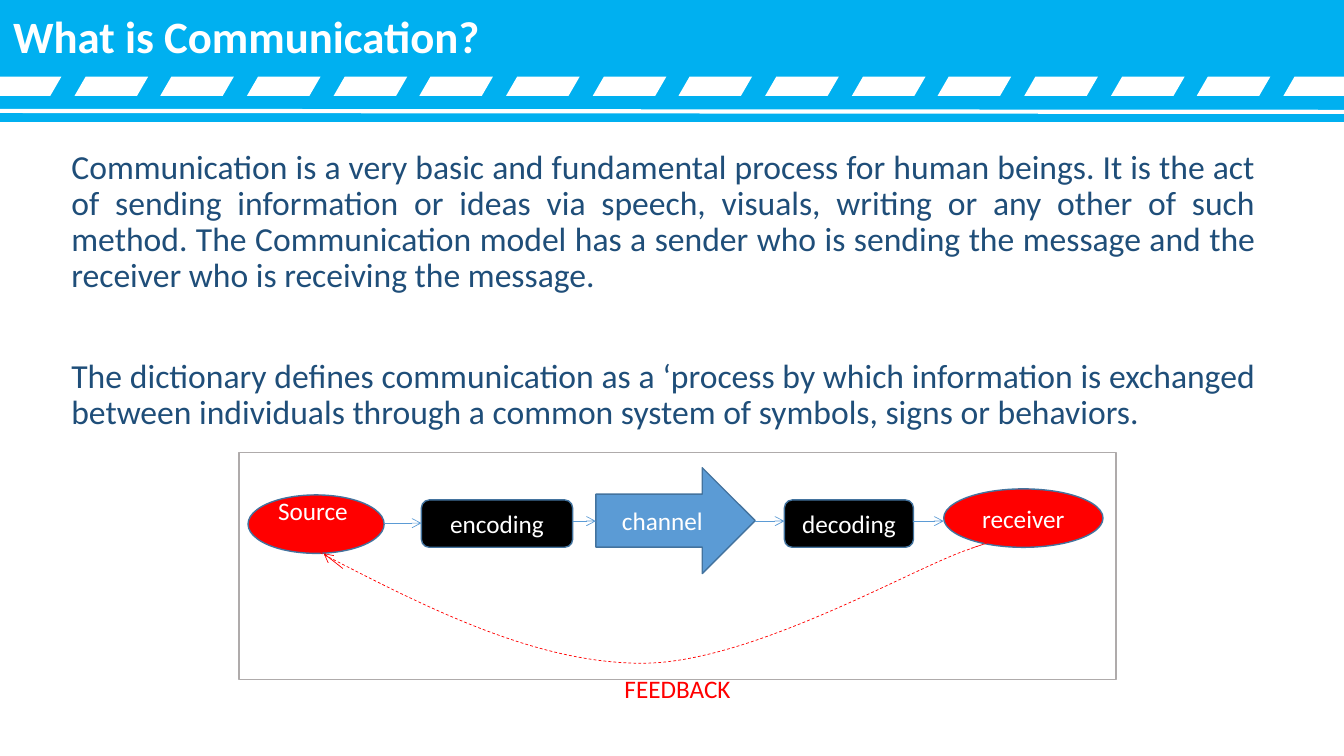
"""Build the slide that explains what communication is."""
from dataclasses import dataclass

from lxml import etree
from pptx import Presentation
from pptx.dml.color import RGBColor
from pptx.enum.dml import MSO_LINE
from pptx.enum.shapes import MSO_CONNECTOR, MSO_SHAPE
from pptx.enum.text import MSO_ANCHOR, MSO_AUTO_SIZE, PP_ALIGN
from pptx.oxml.ns import qn
from pptx.util import Emu, Pt

PX = 9144
WIDTH, HEIGHT = 1333, 750
FONT = "Calibri"
WHITE, BLACK, RED = "FFFFFF", "000000", "FF0000"
SKY, NAVY, BLUE, OUTLINE, GREY = "00B0F0", "1F4E79", "5B9BD5", "43739E", "AFABAB"
RECTANGLE, OVAL = MSO_SHAPE.RECTANGLE, MSO_SHAPE.OVAL
ROUNDED, RIGHT_ARROW = MSO_SHAPE.ROUNDED_RECTANGLE, MSO_SHAPE.RIGHT_ARROW
STRAIGHT, DASH = MSO_CONNECTOR.STRAIGHT, MSO_LINE.DASH
LEFT, CENTER, JUSTIFY = PP_ALIGN.LEFT, PP_ALIGN.CENTER, PP_ALIGN.JUSTIFY
TOP, MIDDLE = MSO_ANCHOR.TOP, MSO_ANCHOR.MIDDLE
TITLE_ONLY = 5
DASH_COUNT, DASH_START, DASH_PITCH = 16, -12, 85.67


@dataclass(frozen=True)
class Box:
    left: int
    top: int
    width: int
    height: int


@dataclass(frozen=True)
class Stage:
    label: str
    kind: int
    box: Box
    fill: str
    inset_right: int = 10
    inset_bottom: int = 5


@dataclass(frozen=True)
class Line:
    start: tuple[int, int]
    end: tuple[int, int]
    color: str = BLUE
    weight: float = 0.5
    arrow: bool = True


@dataclass(frozen=True)
class Passage:
    text: str
    space_before: int


STAGES = [
    Stage("Source", OVAL, Box(246, 491, 135, 58), RED, 16, 33),
    Stage("encoding", ROUNDED, Box(418, 496, 150, 47), BLACK),
    Stage("channel", RIGHT_ARROW, Box(591, 464, 158, 105), BLUE),
    Stage("decoding", ROUNDED, Box(778, 496, 128, 47), BLACK),
    Stage("receiver", OVAL, Box(936, 485, 158, 58), RED),
]
LINES = [
    Line((381, 519), (418, 519)),
    Line((568, 517), (591, 517)),
    Line((749, 517), (778, 517)),
    Line((906, 517), (936, 517)),
    Line((340, 564), (321, 549), RED),
]
FEEDBACK_CURVE = [
    (313, 546),
    (421, 602), (530, 658), (637, 658),
    (744, 658), (903, 565), (958, 546),
    (1012, 527), (988, 536), (963, 544),
]
PASSAGES = [
    Passage(
        "Communication is a very basic and fundamental process for human beings. "
        "It is the act of sending information or ideas via speech, visuals, writing "
        "or any other of such method. The Communication model has a sender who is "
        "sending the message and the receiver who is receiving the message.", 10),
    Passage(
        "The dictionary defines communication as a ‘process by which information is "
        "exchanged between individuals through a common system of symbols, signs or "
        "behaviors.", 46),
]


def px(length: float) -> Emu:
    """Turn a length in px into EMU."""
    return Emu(round(length * PX))


def rgb(color: str) -> RGBColor:
    """Turn a hex string into a colour."""
    return RGBColor.from_string(color)


def place(box: Box) -> tuple[Emu, Emu, Emu, Emu]:
    """Give the four lengths of a box in EMU."""
    return px(box.left), px(box.top), px(box.width), px(box.height)


def paint(shape, fill: str = "", line: str = "", weight: float = 1) -> None:
    """Set the fill and outline of a shape and clear its shadow."""
    shape.shadow.inherit = False
    if fill:
        shape.fill.solid()
        shape.fill.fore_color.rgb = rgb(fill)
    else:
        shape.fill.background()
    if line:
        shape.line.color.rgb = rgb(line)
        shape.line.width = Pt(weight)
    else:
        shape.line.fill.background()


def set_frame(frame, anchor=TOP, right: int = 10, bottom: int = 5) -> None:
    """Set wrapping, anchor and insets of a text frame."""
    frame.word_wrap = True
    frame.auto_size = MSO_AUTO_SIZE.NONE
    frame.vertical_anchor = anchor
    frame.margin_left, frame.margin_top = px(10), px(5)
    frame.margin_right, frame.margin_bottom = px(right), px(bottom)


def write(para, text: str, size: int, color: str, align=CENTER, bold=False) -> None:
    """Add one formatted run to a paragraph."""
    para.alignment = align
    span = para.add_run()
    span.text = text
    span.font.name, span.font.size, span.font.bold = FONT, Pt(size), bold
    span.font.color.rgb = rgb(color)


def add_panel(page, kind: int, box: Box, fill: str, line: str = ""):
    """Add a painted preset shape."""
    shape = page.shapes.add_shape(kind, *place(box))
    paint(shape, fill, line)
    return shape


def add_line(page, line: Line) -> None:
    """Add a straight line, with an arrowhead if it has one."""
    connector = page.shapes.add_connector(
        STRAIGHT, *(px(value) for value in line.start + line.end))
    connector.line.color.rgb = rgb(line.color)
    connector.line.width = Pt(line.weight)
    properties = connector._element.spPr
    if line.arrow:
        etree.SubElement(properties.find(qn("a:ln")), qn("a:tailEnd"), type="arrow")
    etree.SubElement(properties, qn("a:effectLst"))


def add_outline(page, points: list[tuple[float, float]], close: bool):
    """Add a freeform through the given points."""
    builder = page.shapes.build_freeform(*points[0], scale=PX)
    builder.add_line_segments(points[1:], close=close)
    return builder.convert_to_shape()


def add_header(page) -> None:
    """Draw the header band, its slanted dashes, its rule and the title."""
    add_panel(page, RECTANGLE, Box(0, 0, WIDTH, 121), SKY)
    for index in range(DASH_COUNT):
        left = round(DASH_START + index * DASH_PITCH)
        corners = [(left + 11, 76), (left + 73, 76), (left + 62, 95), (left, 95)]
        paint(add_outline(page, corners, True), WHITE)
    add_line(page, Line((0, 110), (WIDTH, 111), WHITE, 3, False))
    title = page.shapes.title
    title.left, title.top, title.width, title.height = place(Box(3, 4, 691, 64))
    set_frame(title.text_frame)
    write(title.text_frame.paragraphs[0], "What is Communication?", 32, WHITE, LEFT, True)
    title.element.getparent().append(title.element)


def add_passages(page) -> None:
    """Write the two body paragraphs."""
    frame = page.shapes.add_textbox(*place(Box(61, 144, 1194, 296))).text_frame
    set_frame(frame)
    for index, passage in enumerate(PASSAGES):
        para = frame.add_paragraph() if index else frame.paragraphs[0]
        para.line_spacing, para.space_before = 0.9, Pt(passage.space_before)
        write(para, passage.text, 24, NAVY, JUSTIFY)


def add_feedback(page) -> None:
    """Draw the dashed feedback curve and its label."""
    curve = add_outline(page, FEEDBACK_CURVE, False)
    paint(curve, line=RED, weight=0.5)
    curve.line.dash_style = DASH
    outline = next(curve.element.iter(qn("a:path")))
    segments = outline.findall(qn("a:lnTo"))
    for first in range(0, len(segments), 3):
        bezier = etree.SubElement(outline, qn("a:cubicBezTo"))
        for segment in segments[first:first + 3]:
            bezier.append(segment[0])
            outline.remove(segment)
    label = page.shapes.add_textbox(*place(Box(572, 663, 200, 40))).text_frame
    set_frame(label, MIDDLE)
    write(label.paragraphs[0], "FEEDBACK", 18, RED)


def add_model(page) -> None:
    """Draw the communication model inside its frame."""
    add_panel(page, RECTANGLE, Box(237, 449, 870, 225), WHITE, GREY)
    for stage in STAGES:
        frame = add_panel(page, stage.kind, stage.box, stage.fill, OUTLINE).text_frame
        set_frame(frame, MIDDLE, stage.inset_right, stage.inset_bottom)
        write(frame.paragraphs[0], stage.label, 18, WHITE)
    add_feedback(page)
    for line in LINES:
        add_line(page, line)


def main() -> None:
    """Build and save the deck."""
    deck = Presentation()
    deck.slide_width, deck.slide_height = px(WIDTH), px(HEIGHT)
    page = deck.slides.add_slide(deck.slide_layouts[TITLE_ONLY])
    add_header(page)
    add_passages(page)
    add_model(page)
    deck.save("out.pptx")


if __name__ == "__main__":
    main()
